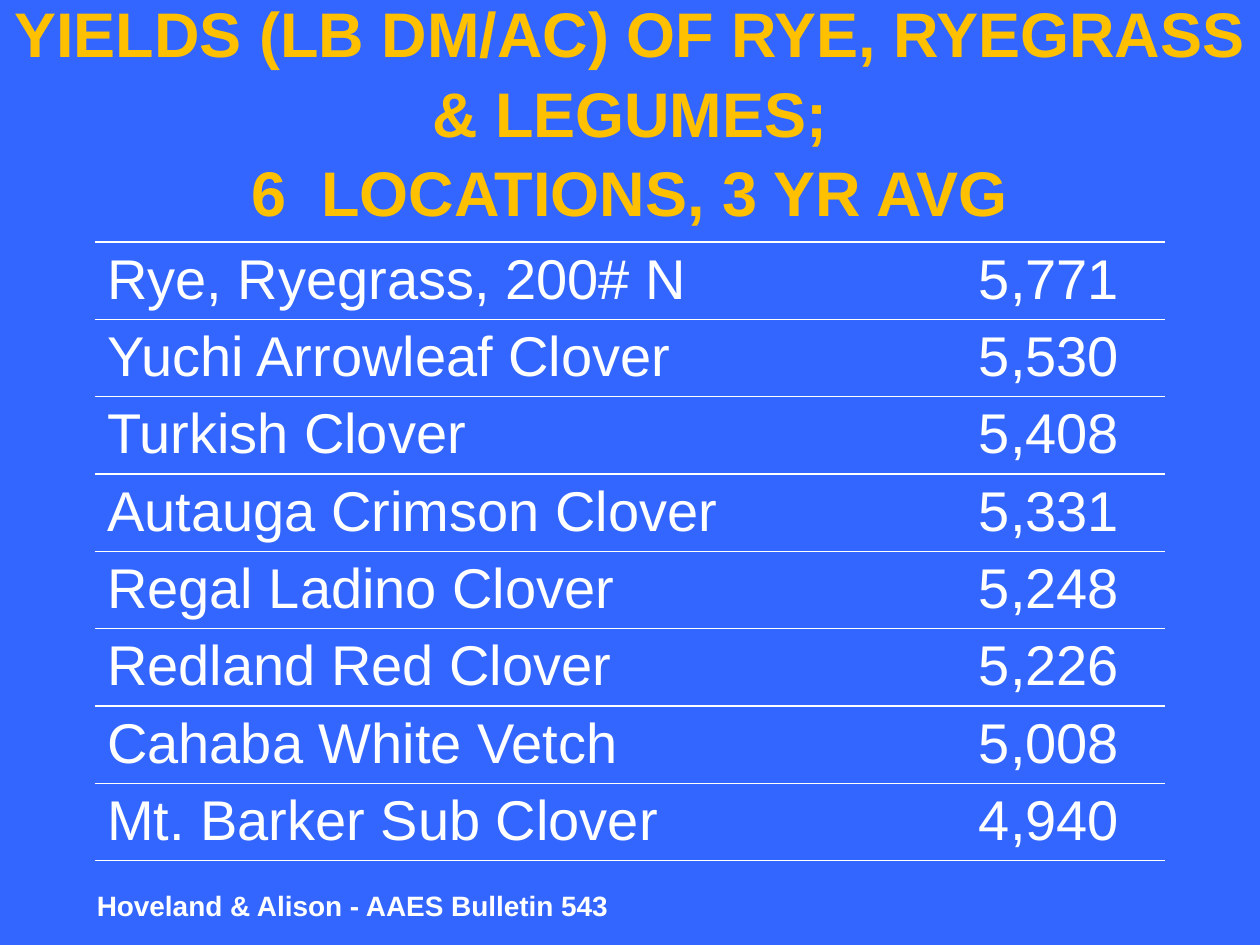
from pptx import Presentation
from pptx import util as u
from pptx.dml.color import RGBColor
from pptx.enum import text
from pptx.oxml import parse_xml
from pptx.oxml.ns import nsdecls

TITLE = "YIELDS (LB DM/AC) OF RYE, RYEGRASS & LEGUMES;\v6  LOCATIONS, 3 YR AVG"
YIELDS = [
    ("Rye, Ryegrass, 200# N", "5,771"),
    ("Yuchi Arrowleaf Clover", "5,530"),
    ("Turkish Clover", "5,408"),
    ("Autauga Crimson Clover", "5,331"),
    ("Regal Ladino Clover", "5,248"),
    ("Redland Red Clover", "5,226"),
    ("Cahaba White Vetch", "5,008"),
    ("Mt. Barker Sub Clover", "4,940"),
]
SOURCE = "Hoveland & Alison - AAES Bulletin 543"

BLUE, GOLD, WHITE = "3366FF", "FFC000", "FFFFFF"
WIDTH, HEIGHT = 10, 7.5
COLUMNS = (6.92, 1.58)
ROW_HEIGHT = 0.6


def color(value):
    return RGBColor.from_string(value)


def style(paragraph, size, value, bold=False):
    font = paragraph.font
    font.name, font.size, font.bold = "Arial", u.Pt(size), bold
    font.color.rgb = color(value)


def add_text(slide, box, content, size, value):
    shape = slide.shapes.add_textbox(*map(u.Inches, box))
    shape.text_frame.word_wrap = True
    shape.text_frame.text = content
    style(shape.text_frame.paragraphs[0], size, value, bold=True)
    return shape


def rule_cell(cell):
    """White rules above and below, none at the sides."""
    properties = cell._tc.get_or_add_tcPr()
    solid = f'<a:solidFill><a:srgbClr val="{WHITE}"/></a:solidFill>'
    sides = {"lnL": "<a:noFill/>", "lnR": "<a:noFill/>", "lnT": solid, "lnB": solid}
    for position, (side, fill) in enumerate(sides.items()):
        line = parse_xml(f'<a:{side} {nsdecls("a")} w="{u.Pt(1)}">{fill}</a:{side}>')
        properties.insert(position, line)


presentation = Presentation()
presentation.slide_width, presentation.slide_height = u.Inches(WIDTH), u.Inches(HEIGHT)
slide = presentation.slides.add_slide(presentation.slide_layouts[6])
slide.background.fill.solid()
slide.background.fill.fore_color.rgb = color(BLUE)

# Title
title = add_text(slide, (0, 0, WIDTH, 1.75), TITLE, 36, GOLD)
title.fill.solid()
title.fill.fore_color.rgb = color(BLUE)
title.text_frame.vertical_anchor = text.MSO_ANCHOR.MIDDLE
title.text_frame.paragraphs[0].alignment = text.PP_ALIGN.CENTER
title.text_frame.paragraphs[0].line_spacing = 1.05

# Yield table
table_width = sum(COLUMNS)
table = slide.shapes.add_table(
    len(YIELDS), len(COLUMNS),
    u.Inches((WIDTH - table_width) / 2), u.Inches(1.92),
    u.Inches(table_width), u.Inches(ROW_HEIGHT * len(YIELDS)),
).table
table.first_row = table.horz_banding = False
for column, width in zip(table.columns, COLUMNS):
    column.width = u.Inches(width)
for row, values in zip(table.rows, YIELDS):
    row.height = u.Inches(ROW_HEIGHT)
    for cell, value in zip(row.cells, values):
        cell.text = value
        cell.margin_top, cell.margin_bottom = u.Inches(0.05), u.Inches(0.03)
        cell.fill.background()
        style(cell.text_frame.paragraphs[0], 32, WHITE)
        rule_cell(cell)

# Source
add_text(slide, (0.67, 7, 7.5, 0.37), SOURCE, 16, WHITE)

presentation.save("out.pptx")
